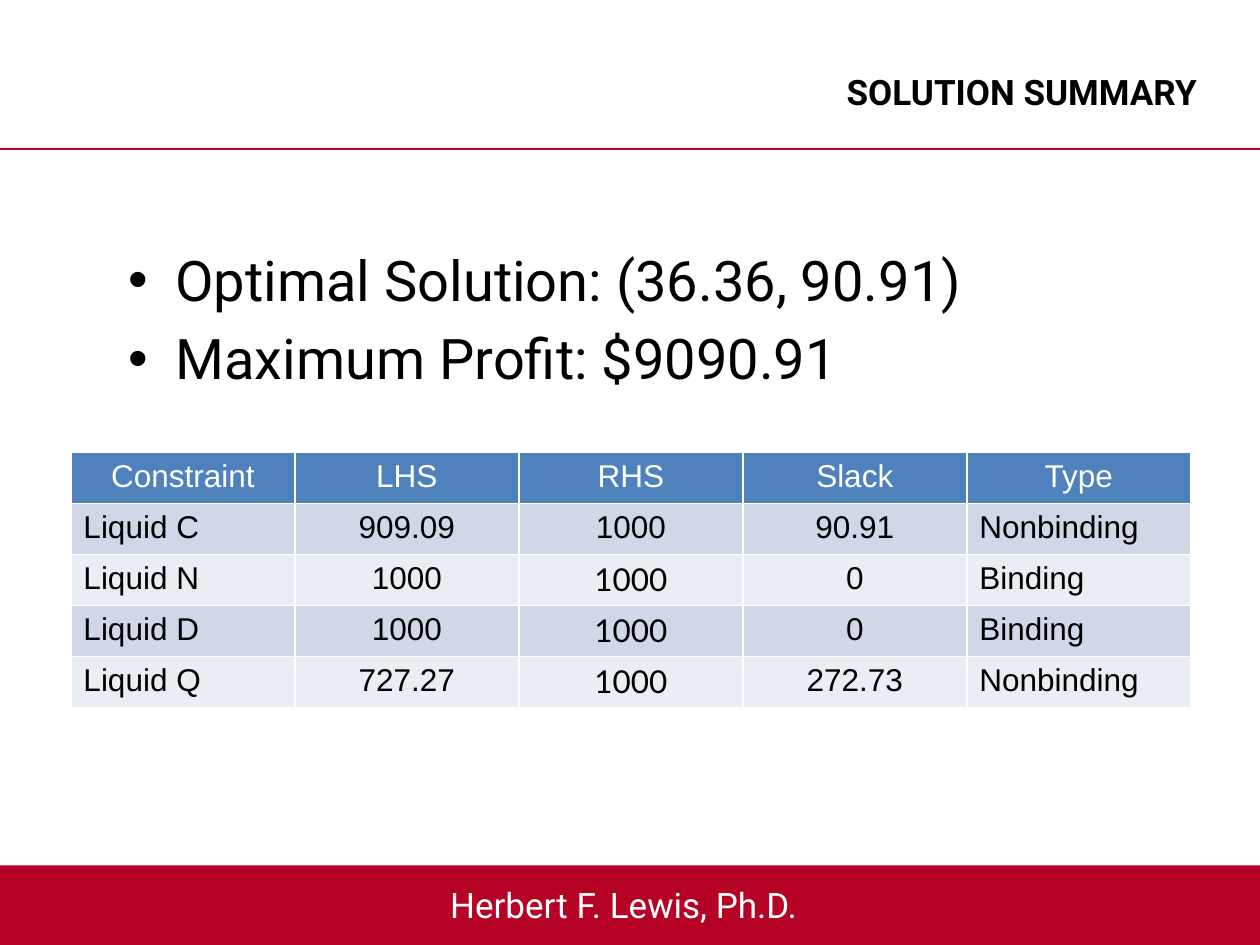
from dataclasses import dataclass

from lxml.etree import SubElement
from pptx import Presentation
from pptx.dml.color import RGBColor
from pptx.enum.shapes import MSO_CONNECTOR as Connector, MSO_SHAPE as Shape
from pptx.enum.text import PP_ALIGN as Align
from pptx.oxml.ns import qn
from pptx.util import Pt

RED, BLACK, WHITE = "B60225", "000000", "FFFFFF"
HEADER_FILL, BAND_FILLS = "4F81BD", ("D0D8E8", "E9EDF4")
WIDTH, HEIGHT = 720, 540
INDENT = 27


@dataclass
class TextBlock:
    lines: list[str]
    left: float
    top: float
    width: float
    height: float
    size: float
    color: str = BLACK
    align: Align = Align.LEFT
    bold: bool = False
    bullet: str = ""
    inset_left: float = 0
    inset_right: float = 0


@dataclass
class Column:
    title: str
    values: list[str]
    align: Align = Align.CENTER


def set_color(target, color: str) -> None:
    """Color a font, or make a fill solid in that color."""
    if hasattr(target, "solid"):
        target.solid()
        target.fore_color.rgb = RGBColor.from_string(color)
    else:
        target.color.rgb = RGBColor.from_string(color)


def add_run(paragraph, text: str, font: str, size: float, color: str, bold: bool = False) -> None:
    run = paragraph.add_run()
    run.text = text
    run.font.name = font
    run.font.size = Pt(size)
    run.font.bold = bold
    set_color(run.font, color)


def add_text(slide, block: TextBlock) -> None:
    shape = slide.shapes.add_textbox(Pt(block.left), Pt(block.top), Pt(block.width), Pt(block.height))
    frame = shape.text_frame
    frame.word_wrap = True
    frame.margin_left, frame.margin_right = Pt(block.inset_left), Pt(block.inset_right)
    for index, line in enumerate(block.lines):
        paragraph = frame.add_paragraph() if index else frame.paragraphs[0]
        paragraph.alignment = block.align
        if index:
            paragraph.space_before = Pt(block.size * 0.2)
        if block.bullet:
            properties = paragraph._p.get_or_add_pPr()
            properties.set("marL", str(Pt(INDENT)))
            properties.set("indent", str(Pt(-INDENT)))
            SubElement(properties, qn("a:buFont"), typeface="Arial")
            SubElement(properties, qn("a:buChar"), char=block.bullet)
        add_run(paragraph, line, "Roboto", block.size, block.color, block.bold)


def set_borders(cell, color: str, width: float) -> None:
    properties = cell._tc.get_or_add_tcPr()
    for position, side in enumerate(("lnL", "lnR", "lnT", "lnB")):
        line = properties.makeelement(qn(f"a:{side}"), {"w": str(Pt(width))})
        fill = SubElement(line, qn("a:solidFill"))
        SubElement(fill, qn("a:srgbClr"), val=color)
        properties.insert(position, line)


def add_table(slide, columns: list[Column], left: float, top: float,
              column_width: float, row_height: float) -> None:
    row_count = len(columns[0].values) + 1
    table = slide.shapes.add_table(
        row_count, len(columns), Pt(left), Pt(top),
        Pt(column_width * len(columns)), Pt(row_height * row_count)).table
    for row in table.rows:
        row.height = Pt(row_height)
    for column_index, column in enumerate(columns):
        table.columns[column_index].width = Pt(column_width)
        for row_index, text in enumerate([column.title, *column.values]):
            cell = table.cell(row_index, column_index)
            is_header = row_index == 0
            set_color(cell.fill, HEADER_FILL if is_header else BAND_FILLS[(row_index - 1) % 2])
            set_borders(cell, WHITE, 1)
            paragraph = cell.text_frame.paragraphs[0]
            paragraph.alignment = Align.CENTER if is_header else column.align
            font = "Lato" if column.title == "RHS" and row_index > 1 else "Arial"
            add_run(paragraph, text, font, 18, WHITE if is_header else BLACK)


def main() -> None:
    presentation = Presentation()
    presentation.slide_width, presentation.slide_height = Pt(WIDTH), Pt(HEIGHT)
    slide = presentation.slides.add_slide(presentation.slide_layouts[6])

    # Footer band
    footer_top = 494.6
    band = slide.shapes.add_shape(
        Shape.RECTANGLE, Pt(0), Pt(footer_top), Pt(WIDTH), Pt(HEIGHT - footer_top))
    band.shadow.inherit = False
    set_color(band.fill, RED)
    band.line.fill.background()

    # Rule under the title
    rule = slide.shapes.add_connector(Connector.STRAIGHT, Pt(0), Pt(85.2), Pt(WIDTH), Pt(85.2))
    set_color(rule.line.fill, RED)
    rule.line.width = Pt(1)
    SubElement(rule._element.spPr, qn("a:effectLst"))

    # Footer, title and findings
    for block in (
        TextBlock(["Herbert F. Lewis, Ph.D."], 0, 501.1, WIDTH, 38.9, 20, WHITE,
                  Align.CENTER, inset_right=7.2),
        TextBlock(["SOLUTION SUMMARY"], 373, 36.7, 311, 30.2, 20, align=Align.RIGHT, bold=True),
        TextBlock(["Optimal Solution: (36.36, 90.91)", "Maximum Profit: $9090.91"],
                  66.2, 136.8, 550, 342.7, 32, bullet="•", inset_left=7.2, inset_right=7.2),
    ):
        add_text(slide, block)

    # Constraint table
    columns = [
        Column("Constraint", [f"Liquid {letter}" for letter in "CNDQ"], Align.LEFT),
        Column("LHS", ["909.09", "1000", "1000", "727.27"]),
        Column("RHS", ["1000"] * 4),
        Column("Slack", ["90.91", "0", "0", "272.73"]),
        Column("Type", ["Nonbinding", "Binding", "Binding", "Nonbinding"], Align.LEFT),
    ]
    add_table(slide, columns, 40.5, 258.4, 128, 29.2)

    presentation.save("out.pptx")


if __name__ == "__main__":
    main()
